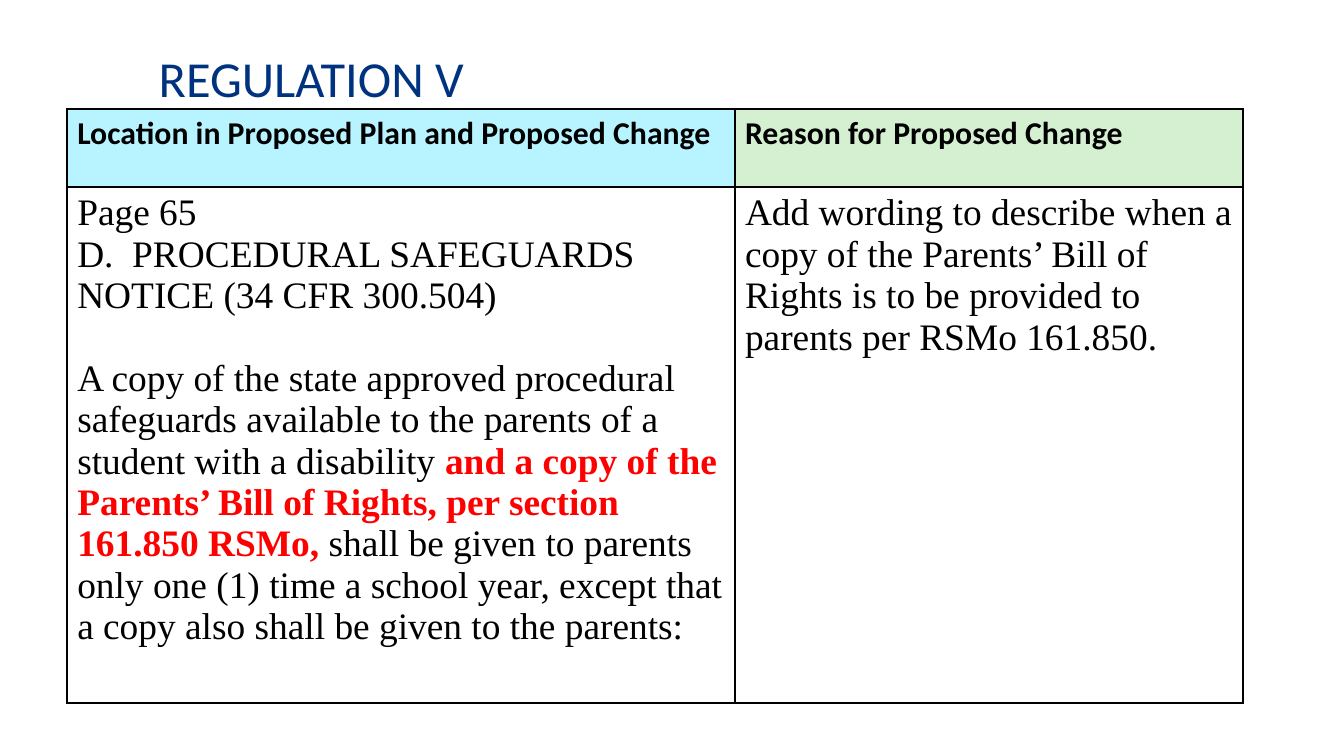
"""Build the Regulation V slide with its table of proposed changes."""
from dataclasses import dataclass
from typing import Optional

from lxml.etree import SubElement
from pptx import Presentation
from pptx.dml.color import RGBColor
from pptx.enum.text import MSO_ANCHOR
from pptx.oxml.ns import qn
from pptx.slide import Slide
from pptx.table import _Cell
from pptx.text.text import _Paragraph
from pptx.util import Cm, Pt

NAVY = RGBColor(0x00, 0x33, 0x7F)
BLACK = RGBColor(0x00, 0x00, 0x00)
RED = RGBColor(0xFF, 0x00, 0x00)
CYAN = RGBColor(0xB8, 0xF4, 0xFF)
GREEN = RGBColor(0xD4, 0xF0, 0xD1)

COLUMN_WIDTHS = (Cm(12.62), Cm(9.6))
ROW_HEIGHTS = (Cm(1.48), Cm(9.75))


@dataclass(frozen=True)
class Style:
    font: str
    size: int
    color: RGBColor = BLACK
    bold: bool = False


@dataclass(frozen=True)
class Phrase:
    text: str
    style: Style


@dataclass(frozen=True)
class Passage:
    phrases: tuple[Phrase, ...]
    space_before: int = 0


@dataclass(frozen=True)
class Entry:
    passages: tuple[Passage, ...]
    fill: Optional[RGBColor] = None


TITLE = Style("Calibri", 27, NAVY)
HEADING = Style("Calibri", 17, bold=True)
BODY = Style("Times New Roman", 20)
ADDED = Style("Times New Roman", 20, RED, True)


def plain(text: str, style: Style = BODY) -> Passage:
    return Passage((Phrase(text, style),))


ENTRIES = (
    (
        Entry((plain("Location in Proposed Plan and Proposed Change", HEADING),), CYAN),
        Entry((plain("Reason for Proposed Change", HEADING),), GREEN),
    ),
    (
        Entry((
            plain("Page 65"),
            plain("D.  PROCEDURAL SAFEGUARDS NOTICE (34 CFR 300.504)"),
            Passage((
                Phrase("A copy of the state approved procedural safeguards available "
                       "to the parents of a student with a disability ", BODY),
                Phrase("and a copy of the Parents’ Bill of Rights, "
                       "per section 161.850 RSMo,", ADDED),
                Phrase(" shall be given to parents only one (1) time a school year, "
                       "except that a copy also shall be given to the parents:", BODY),
            ), space_before=22),
        )),
        Entry((plain("Add wording to describe when a copy of the Parents’ Bill of "
                     "Rights is to be provided to parents per RSMo 161.850."),)),
    ),
)


def add_phrase(paragraph: _Paragraph, phrase: Phrase) -> None:
    run = paragraph.add_run()
    run.text = phrase.text
    run.font.name = phrase.style.font
    run.font.size = Pt(phrase.style.size)
    run.font.bold = phrase.style.bold
    run.font.color.rgb = phrase.style.color


def add_borders(cell: _Cell) -> None:
    properties = cell._tc.get_or_add_tcPr()
    for position, side in enumerate(("lnL", "lnR", "lnT", "lnB")):
        line = SubElement(properties, qn(f"a:{side}"), w=str(Pt(1)))
        color = SubElement(SubElement(line, qn("a:solidFill")), qn("a:srgbClr"))
        color.set("val", str(BLACK))
        properties.insert(position, line)


def fill_cell(cell: _Cell, entry: Entry) -> None:
    cell.margin_left = cell.margin_right = Cm(0.19)
    cell.margin_top = cell.margin_bottom = Cm(0.1)
    if entry.fill is None:
        cell.fill.background()
    else:
        cell.fill.solid()
        cell.fill.fore_color.rgb = entry.fill
    add_borders(cell)
    frame = cell.text_frame
    for index, passage in enumerate(entry.passages):
        paragraph = frame.add_paragraph() if index else frame.paragraphs[0]
        paragraph.space_before = Pt(passage.space_before)
        for phrase in passage.phrases:
            add_phrase(paragraph, phrase)


def add_title(slide: Slide) -> None:
    title = slide.shapes.add_textbox(Cm(2.75), Cm(0.56), Cm(22.65), Cm(1.8))
    frame = title.text_frame
    frame.word_wrap = True
    frame.vertical_anchor = MSO_ANCHOR.MIDDLE
    add_phrase(frame.paragraphs[0], Phrase("REGULATION V", TITLE))


def add_changes(slide: Slide) -> None:
    changes = slide.shapes.add_table(
        len(ROW_HEIGHTS), len(COLUMN_WIDTHS), Cm(1.27), Cm(2.06),
        sum(COLUMN_WIDTHS), sum(ROW_HEIGHTS),
    ).table
    changes.horz_banding = False
    for column, width in zip(changes.columns, COLUMN_WIDTHS):
        column.width = width
    for row, height, entries in zip(changes.rows, ROW_HEIGHTS, ENTRIES):
        row.height = height
        for cell, entry in zip(row.cells, entries):
            fill_cell(cell, entry)


def main() -> None:
    presentation = Presentation()
    presentation.slide_width = Cm(25.4)
    presentation.slide_height = Cm(14.29)
    slide = presentation.slides.add_slide(presentation.slide_layouts[6])
    add_title(slide)
    add_changes(slide)
    presentation.save("out.pptx")


if __name__ == "__main__":
    main()
